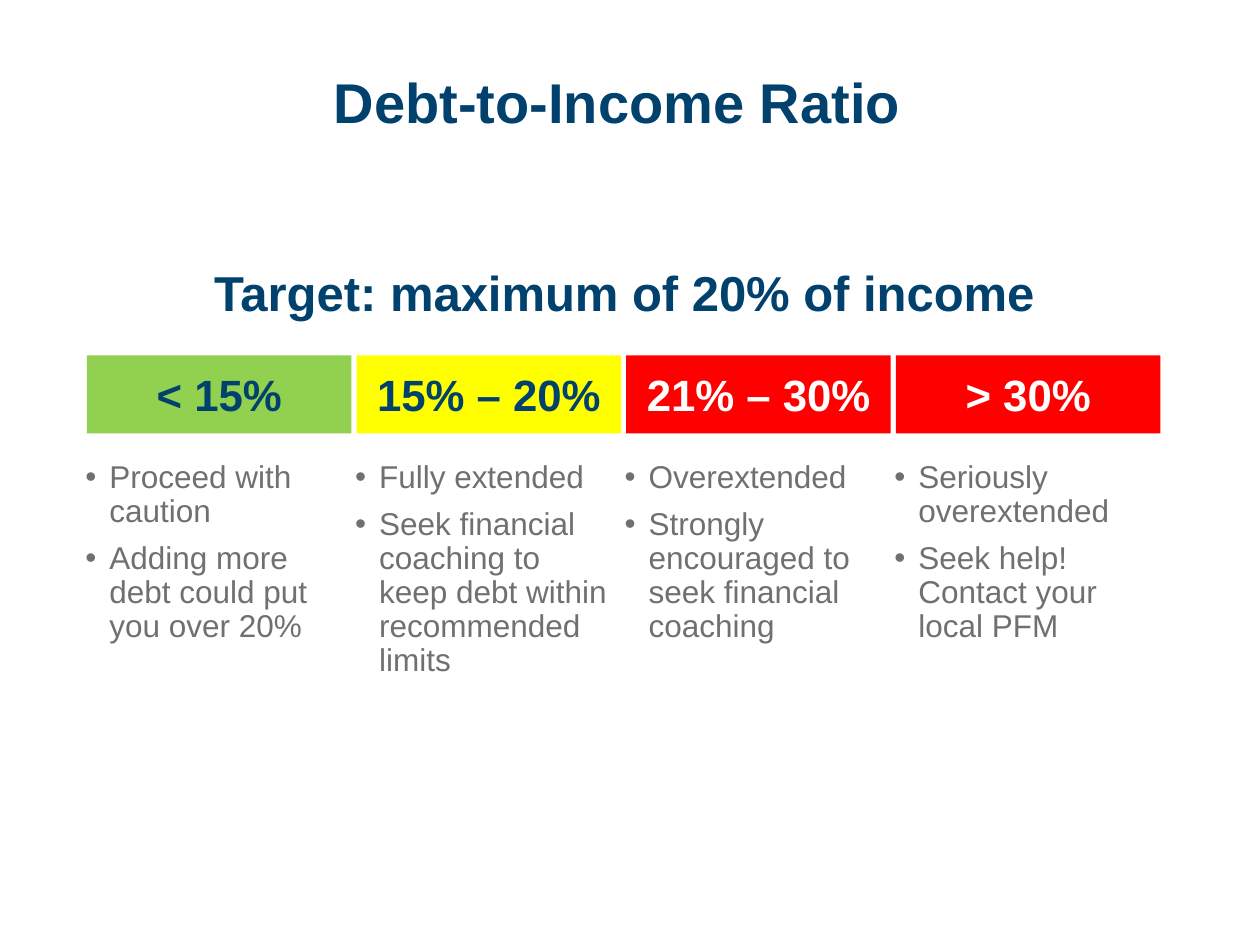
from lxml.etree import SubElement
from pptx import Presentation
from pptx.dml.color import RGBColor
from pptx.enum.shapes import MSO_SHAPE as Shape
from pptx.enum.text import MSO_ANCHOR as Anchor, PP_ALIGN as Align
from pptx.oxml.ns import qn
from pptx.util import Inches, Pt

NAVY = RGBColor(0x00, 0x41, 0x6D)
GRAY = RGBColor(0x70, 0x70, 0x70)
GREEN = RGBColor(0x92, 0xD0, 0x50)
YELLOW = RGBColor(0xFF, 0xFF, 0x00)
RED = RGBColor(0xFF, 0x00, 0x00)
WHITE = RGBColor(0xFF, 0xFF, 0xFF)

LEFT, PITCH, NOTE_SHIFT = 0.69, 2.14, 0.11
BANDS = [
    ("< 15%", GREEN, NAVY, 2.06,
     ["Proceed with caution", "Adding more debt could put you over 20%"]),
    ("15% – 20%", YELLOW, NAVY, 2.21,
     ["Fully extended",
      "Seek financial coaching to keep debt within recommended limits"]),
    ("21% – 30%", RED, WHITE, 2.06,
     ["Overextended", "Strongly encouraged to seek financial coaching"]),
    ("> 30%", RED, WHITE, 2.31,
     ["Seriously overextended", "Seek help!\vContact your\vlocal PFM"]),
]


def write(frame, *lines, size, color, bold=False, align=Align.LEFT,
          anchor=Anchor.TOP, spacing=0.9, bullet=None):
    """Fill a text frame with one formatted paragraph per line."""
    frame.word_wrap = True
    frame.vertical_anchor = anchor
    for index, line in enumerate(lines):
        para = frame.paragraphs[0] if index == 0 else frame.add_paragraph()
        para.text = line
        para.alignment = align
        para.line_spacing = spacing
        para.space_before = Pt(7.5 if index else 0)
        if bullet:
            props = para._p.get_or_add_pPr()
            props.set("marL", str(Inches(0.19)))
            props.set("indent", str(Inches(-0.19)))
            SubElement(props, qn("a:buFont")).set("typeface", "Arial")
            SubElement(props, qn("a:buChar")).set("char", bullet)
        for span in para.runs:
            span.font.name = "Arial"
            span.font.size = Pt(size)
            span.font.bold = bold
            span.font.color.rgb = color


class RatioPage:
    """Style and current slide of the debt ratio page."""

    def __init__(self, deck):
        self.page = deck.slides.add_slide(deck.slide_layouts[5])

    def title(self, text, left, top, width, height):
        box = self.page.shapes.title
        box.left, box.top = Inches(left), Inches(top)
        box.width, box.height = Inches(width), Inches(height)
        write(box.text_frame, text, size=32, color=NAVY, bold=True,
              anchor=Anchor.MIDDLE)

    def text(self, lines, left, top, width, height, **style):
        box = self.page.shapes.add_textbox(
            Inches(left), Inches(top), Inches(width), Inches(height))
        write(box.text_frame, *lines, **style)

    def band(self, text, left, top, width, height, fill, color):
        box = self.page.shapes.add_shape(
            Shape.RECTANGLE, Inches(left), Inches(top), Inches(width), Inches(height))
        box.shadow.inherit = False
        box.fill.solid()
        box.fill.fore_color.rgb = fill
        box.line.fill.background()
        write(box.text_frame, text, size=25, color=color, bold=True,
              align=Align.CENTER, anchor=Anchor.MIDDLE, spacing=1.0)


def main():
    deck = Presentation()
    deck.slide_width, deck.slide_height = Inches(10), Inches(7.5)
    ratio = RatioPage(deck)
    ratio.title("Debt-to-Income Ratio", 2.55, 0.3, 7.5, 1.07)
    ratio.text(["Target: maximum of 20% of income"], LEFT, 2.09, 8.53, 0.48,
               size=28, color=NAVY, bold=True, align=Align.CENTER)
    for column, (label, fill, color, width, notes) in enumerate(BANDS):
        left = LEFT + column * PITCH
        ratio.band(label, left, 2.82, 2.1, 0.62, fill, color)
        ratio.text(notes, left - NOTE_SHIFT, 3.61, width, 1.66,
                   size=18, color=GRAY, bullet="•")
    deck.save("out.pptx")


if __name__ == "__main__":
    main()
